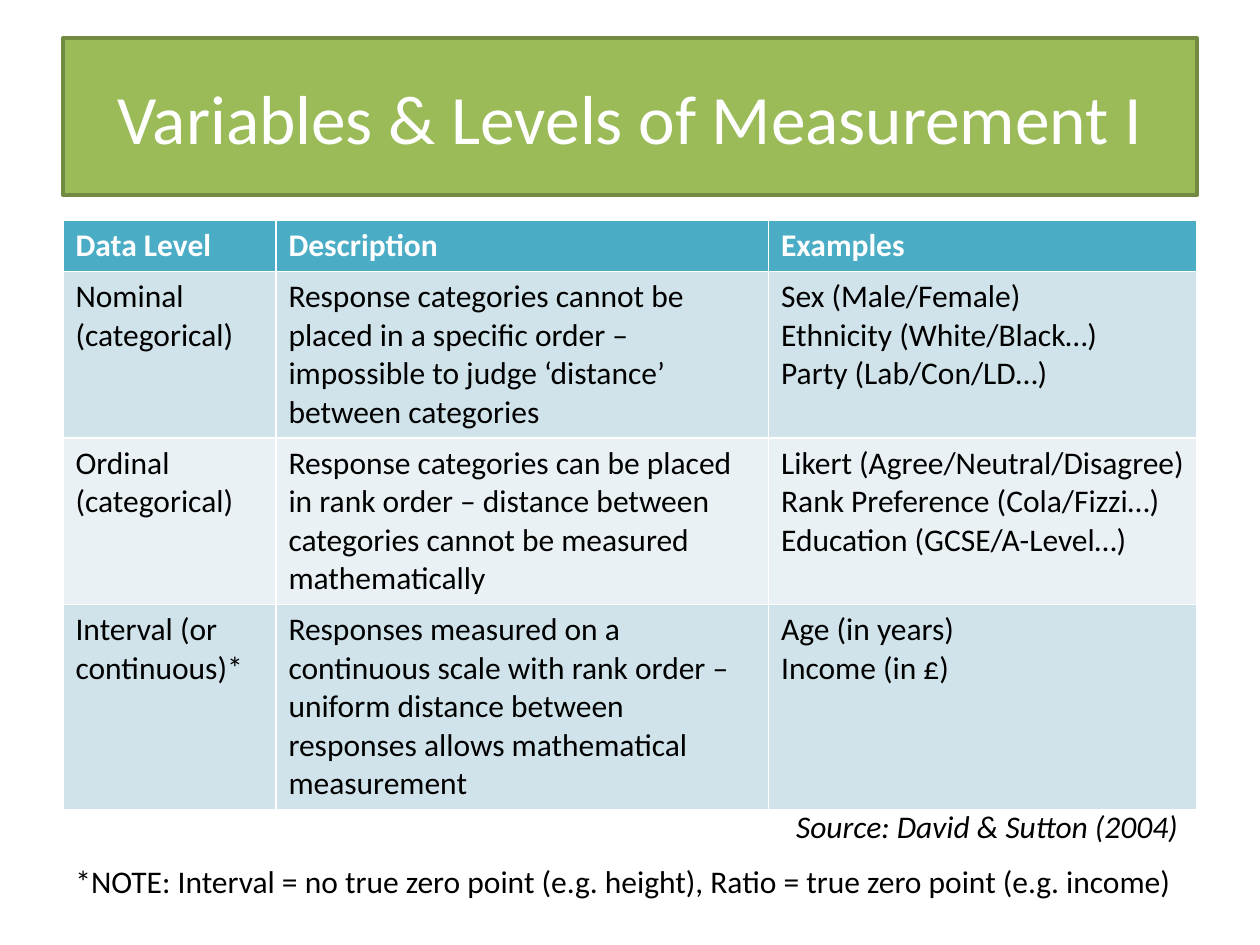
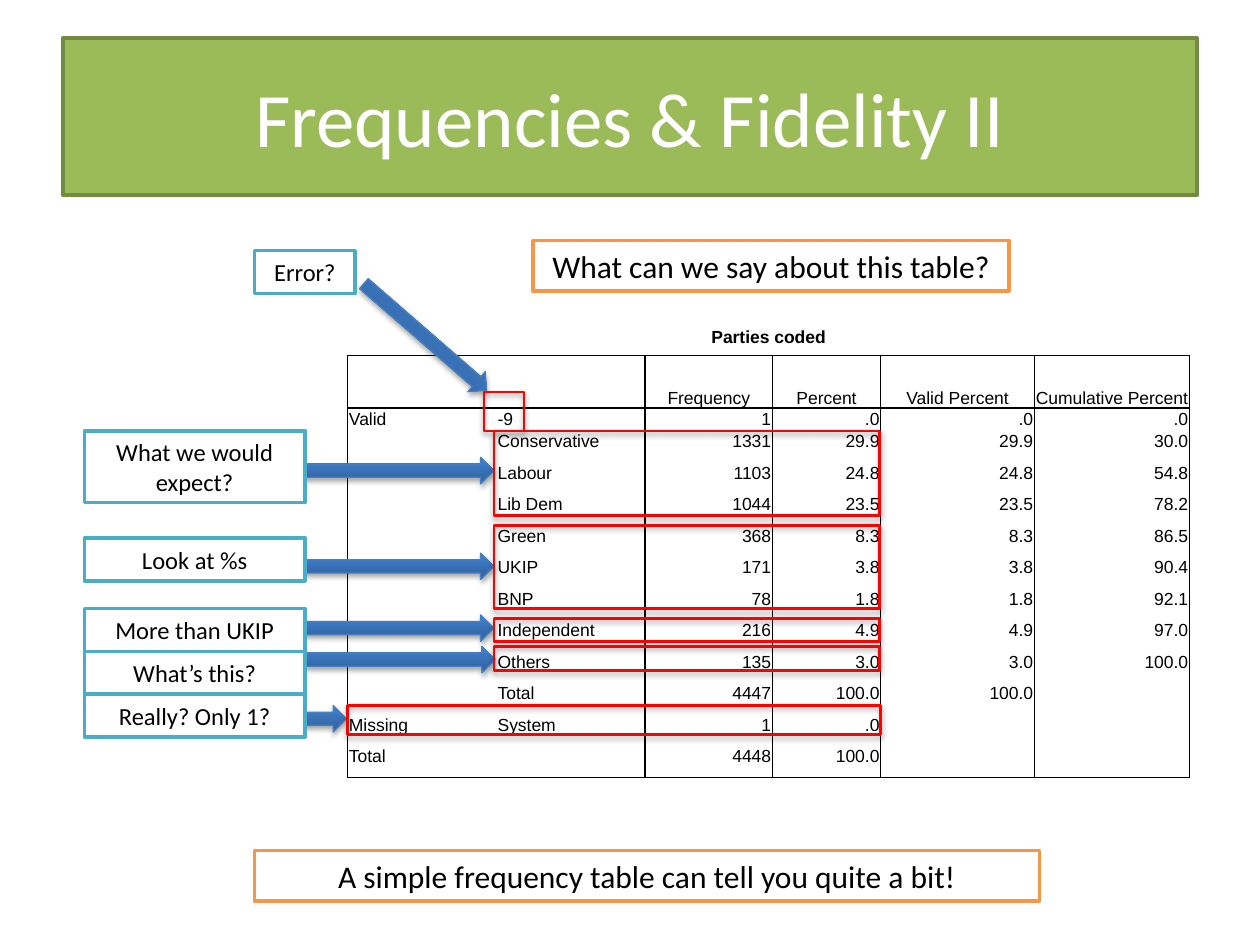
"""Build two slides on levels of measurement and a frequency table."""
import lxml.etree
import pptx
import pptx.dml.color
import pptx.enum.shapes
import pptx.enum.text
import pptx.oxml.ns
import pptx.util

Inches = pptx.util.Inches
Pt = pptx.util.Pt
RGB = pptx.dml.color.RGBColor.from_string
qn = pptx.oxml.ns.qn
Sub = lxml.etree.SubElement
ALIGN = pptx.enum.text.PP_ALIGN
ANCHOR = pptx.enum.text.MSO_ANCHOR
KIND = pptx.enum.shapes.MSO_SHAPE

HUES = {
    "white": "FFFFFF", "black": "000000", "red": "FF0000",
    "green": "9BBB59", "moss": "738A42", "teal": "4BACC6",
    "orange": "F79646", "pale": "E9F1F5", "mist": "D0E3EA",
    "navy": "2F5F99", "blue": "3D7CC7", "edge": "4B7EBC",
}


def write(frame, text, size, hue="black", face="Calibri", align=ALIGN.LEFT, bold=False):
    frame.text = text
    frame.word_wrap = True
    for par in frame.paragraphs:
        par.alignment = align
        for run in par.runs:
            run.font.size = Pt(size)
            run.font.name = face
            run.font.bold = bold
            run.font.color.rgb = RGB(HUES[hue])


def draw(slide, kind, spot, line, width, shade=False):
    shape = slide.shapes.add_shape(kind, *map(Inches, spot))
    shape.line.color.rgb = RGB(HUES[line])
    shape.line.width = Pt(width)
    shape.shadow.inherit = False
    if shade:
        cast = Sub(shape._element.spPr.find(qn("a:effectLst")), qn("a:outerShdw"),
                   blurRad="40000", dist="23000", dir="5400000", rotWithShape="0")
        tint = Sub(cast, qn("a:srgbClr"), val=HUES["black"])
        Sub(tint, qn("a:alpha"), val="35000")
    return shape


deck = pptx.Presentation()
deck.slide_width = Inches(10)
deck.slide_height = Inches(7.5)

slides = []
for text, size in [("Variables & Levels of Measurement I", 39.6),
                   ("Frequencies & Fidelity II", 44)]:
    slide = deck.slides.add_slide(deck.slide_layouts[5])
    title = slide.shapes.title
    title.left, title.top, title.width, title.height = map(Inches, (0.5, 0.3, 9, 1.25))
    title.fill.solid()
    title.fill.fore_color.rgb = RGB(HUES["green"])
    title.line.color.rgb = RGB(HUES["moss"])
    title.line.width = Pt(2)
    write(title.text_frame, text, size, "white", align=ALIGN.CENTER)
    title.text_frame.vertical_anchor = ANCHOR.MIDDLE
    slides.append(slide)
levels, counts = slides

rows = [
    ("Data Level", "Description", "Examples"),
    ("Nominal (categorical)",
     "Response categories cannot be placed in a specific order – impossible to judge "
     "‘distance’ between categories",
     "Sex (Male/Female)\nEthnicity (White/Black…)\nParty (Lab/Con/LD…)"),
    ("Ordinal (categorical)",
     "Response categories can be placed in rank order – distance between categories "
     "cannot be measured mathematically",
     "Likert (Agree/Neutral/Disagree)\nRank Preference (Cola/Fizzi…)\n"
     "Education (GCSE/A-Level…)"),
    ("Interval (or continuous)*",
     "Responses measured on a continuous scale with rank order – uniform distance "
     "between responses allows mathematical measurement",
     "Age (in years)\nIncome (in £)"),
]
grid = levels.shapes.add_table(4, 3, *map(Inches, (0.5, 1.75, 9, 4.61))).table
for col, width in zip(grid.columns, (1.69, 3.91, 3.4)):
    col.width = Inches(width)
for row, high in zip(grid.rows, (0.4, 1.3, 1.3, 1.61)):
    row.height = Inches(high)
for r, row in enumerate(rows):
    for c, text in enumerate(row):
        cell = grid.cell(r, c)
        cell.fill.solid()
        cell.fill.fore_color.rgb = RGB(HUES[("teal", "mist", "pale", "mist")[r]])
        write(cell.text_frame, text, 18, "black" if r else "white", bold=r == 0)

for text, spot, slant in [
    ("*NOTE: Interval = no true zero point (e.g. height), "
     "Ratio = true zero point (e.g. income)", (0.5, 6.79, 9, 0.4), False),
    ("Source: David & Sutton (2004)", (6.22, 6.36, 3.28, 0.4), True),
]:
    note = levels.shapes.add_textbox(*map(Inches, spot))
    write(note.text_frame, text, 18)
    note.text_frame.paragraphs[0].runs[0].font.italic = slant

rows = [
    ("Parties coded", "", "", "", "", ""),
    ("", "", "Frequency", "Percent", "Valid Percent", "Cumulative Percent"),
    ("Valid", "-9", "1", ".0", ".0", ".0"),
    ("", "Conservative", "1331", "29.9", "29.9", "30.0"),
    ("", "Labour", "1103", "24.8", "24.8", "54.8"),
    ("", "Lib Dem", "1044", "23.5", "23.5", "78.2"),
    ("", "Green", "368", "8.3", "8.3", "86.5"),
    ("", "UKIP", "171", "3.8", "3.8", "90.4"),
    ("", "BNP", "78", "1.8", "1.8", "92.1"),
    ("", "Independent", "216", "4.9", "4.9", "97.0"),
    ("", "Others", "135", "3.0", "3.0", "100.0"),
    ("", "Total", "4447", "100.0", "100.0", ""),
    ("Missing", "System", "1", ".0", "", ""),
    ("Total", "", "4448", "100.0", "", ""),
]
last = len(rows) - 1
grid = counts.shapes.add_table(len(rows), 6, *map(Inches, (2.76, 2.53, 6.67, 3.63))).table
grid.first_row = grid.horz_banding = False
for col, width in zip(grid.columns, (1.18, 1.18, 1.01, 0.86, 1.22, 1.23)):
    col.width = Inches(width)
for row, high in zip(grid.rows, [0.29, 0.42, 0.18] + [0.25] * 11):
    row.height = Inches(high)
for start, end in [((0, 0), (0, 5)), ((1, 0), (1, 1)), ((2, 0), (11, 0)),
                   ((last, 0), (last, 1))]:
    grid.cell(*start).merge(grid.cell(*end))

rules = [1, 0, 1, 0.5, 0.5, 0.5, 1]
for r, row in enumerate(rows):
    for c, text in enumerate(row):
        cell = grid.cell(r, c)
        cell.margin_left = cell.margin_right = cell.margin_top = Inches(0.01)
        cell.margin_bottom = 0
        cell.vertical_anchor = (ANCHOR.MIDDLE, ANCHOR.BOTTOM)[r] if r < 2 else ANCHOR.TOP
        align = ALIGN.CENTER if r < 2 else ALIGN.RIGHT if c > 1 else ALIGN.LEFT
        write(cell.text_frame, text, 10, face="Arial", align=align, bold=r == 0)
        if not text:
            Sub(cell.text_frame.paragraphs[0]._p, qn("a:endParaRPr"), sz="1000")
        cell.fill.background()
        wide = c == 0 and r in (1, last)
        sides = {
            "a:lnL": rules[c] if r else 0,
            "a:lnR": 1 if wide else rules[c + 1] if r else 0,
            "a:lnT": int(r in (1, 2)),
            "a:lnB": int(r in (0, 1, last)),
        }
        props = cell._tc.get_or_add_tcPr()
        for place, (side, width) in enumerate(sides.items()):
            line = lxml.etree.Element(qn(side), w=str(int(Pt(width))))
            if width:
                Sub(Sub(line, qn("a:solidFill")), qn("a:srgbClr"), val=HUES["black"])
            else:
                Sub(line, qn("a:noFill"))
            props.insert(place, line)

arrows = [(2.73, 2.57, 1.29, 41), (2.41, 3.63, 1.51, 0), (2.41, 4.39, 1.51, 0),
          (2.41, 4.88, 1.51, 0), (2.42, 5.13, 1.51, 0), (2.41, 5.6, 0.34, 0)]
for left, top, width, turn in arrows:
    arrow = draw(counts, KIND.RIGHT_ARROW, (left, top, width, 0.21), "edge", 0.75, True)
    arrow.rotation = turn
    arrow.fill.gradient()
    arrow.fill.gradient_angle = 90
    for stop, hue, place in zip(arrow.fill.gradient_stops, ("navy", "blue"), (0, 0.8)):
        stop.color.rgb = RGB(HUES[hue])
        stop.position = place

frames = [(3.84, 3.11, 0.32, 0.31), (3.92, 3.42, 3.06, 0.67), (3.92, 4.17, 3.06, 0.66),
          (3.92, 4.91, 3.06, 0.18), (3.92, 5.13, 3.06, 0.19), (2.76, 5.6, 4.23, 0.23)]
for spot in frames:
    draw(counts, KIND.RECTANGLE, spot, "red", 1.5, True).fill.background()

labels = [
    ("What can we say about this table?", (4.23, 1.91, 3.78, 0.4), "orange", 18),
    ("A simple frequency table can tell you quite a bit!", (2.02, 6.75, 6.23, 0.4),
     "orange", 18),
    ("Error?", (2.02, 1.99, 0.8, 0.34), "teal", 14),
    ("What we would expect?", (0.67, 3.42, 1.75, 0.57), "teal", 14),
    ("Look at %s", (0.67, 4.27, 1.75, 0.34), "teal", 14),
    ("More than UKIP", (0.67, 4.83, 1.75, 0.34), "teal", 14),
    ("Really? Only 1?", (0.67, 5.51, 1.75, 0.34), "teal", 14),
    ("What’s this?", (0.67, 5.17, 1.75, 0.34), "teal", 14),
]
for text, spot, hue, size in labels:
    label = draw(counts, KIND.RECTANGLE, spot, hue, 2)
    label.fill.solid()
    label.fill.fore_color.rgb = RGB(HUES["white"])
    write(label.text_frame, text, size, align=ALIGN.CENTER)
    label.text_frame.vertical_anchor = ANCHOR.MIDDLE

deck.save("out.pptx")
